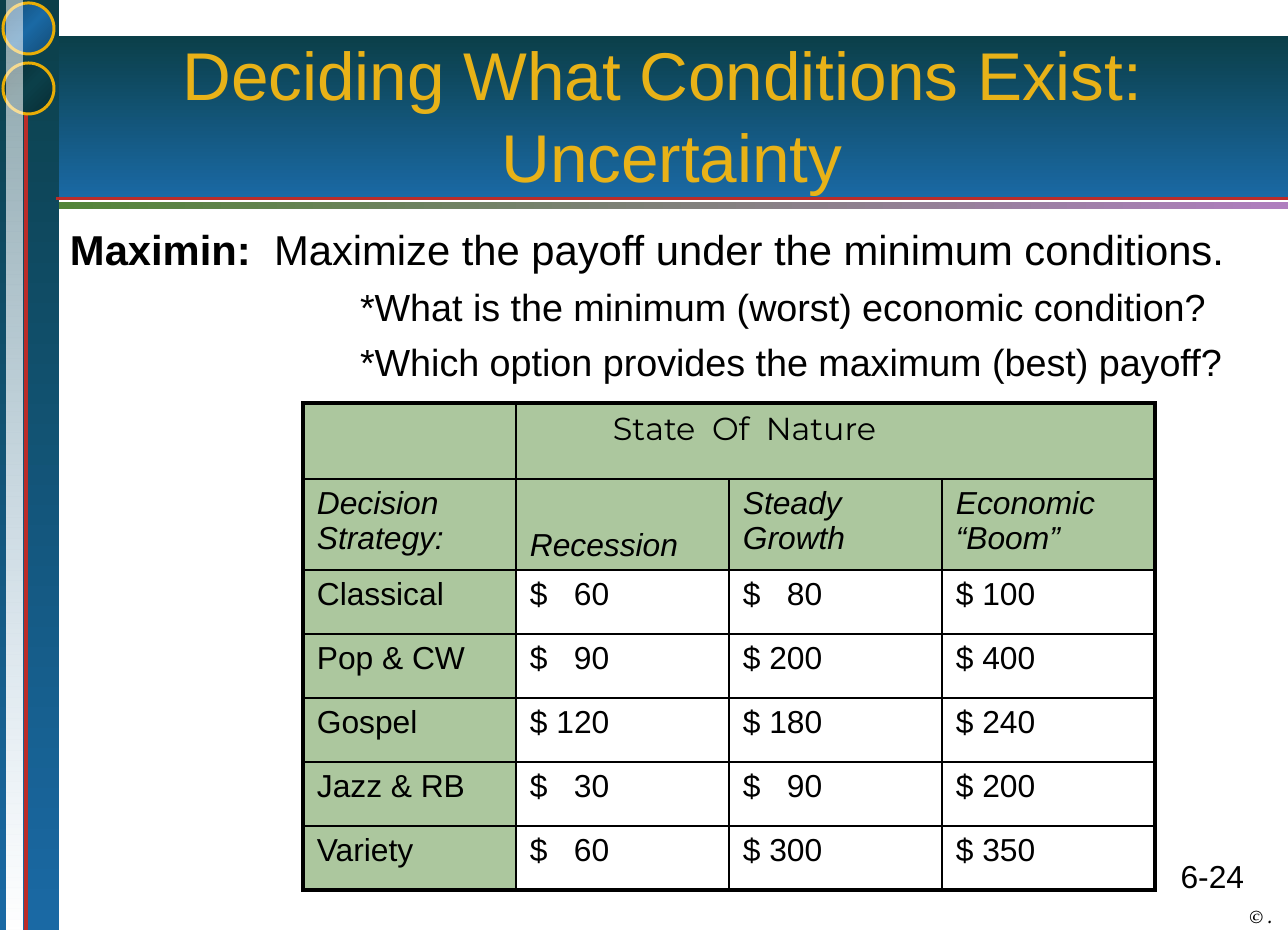
import pptx
import pptx.dml.color
import pptx.enum.shapes
import pptx.enum.text
import pptx.oxml
import pptx.oxml.ns
import pptx.util

SCALE = 6390
SHAPE = pptx.enum.shapes.MSO_SHAPE
ALIGN = pptx.enum.text.PP_ALIGN
ANCHOR = pptx.enum.text.MSO_ANCHOR
BLACK, GOLD, RED, SAGE, WHITE = "000000", "E8AD06", "BB2C29", "ACC79E", "FFFFFF"

BLUE = [(0, "0B3F49", 100), (100, "1A69A4", 100)]
RULE = [(0, "538438", 100), (100, "AF7EBE", 100)]
GLASS = [(0, WHITE, 52), (100, WHITE, 100)]
DARK_DISC = [(0, "082D34", 100), (50, "0B3F49", 100), (100, "082D34", 100)]
BLUE_DISC = [(0, "134B75", 100), (50, "1A69A4", 100), (100, "134B75", 100)]

BANDS = [
    ((0, 36, 1288, 162), BLUE, 90),
    ((56, 202, 1232, 7), RULE, 0),
    ((0, 0, 59, 930), BLUE, 90),
]
LINES = [((56, 199, 1288, 199), 1.5), ((26, 113, 26, 930), 2.25)]
DISCS = [((3, 63, 51, 51), DARK_DISC), ((3, 3, 51, 51), BLUE_DISC)]
STRIPE = (7, 0, 16, 930)

TITLE = "Deciding What Conditions Exist:  Uncertainty"
TERM = "Maximin:"
MEANING = "  Maximize the payoff under the minimum conditions."
QUESTIONS = [
    "*What is the minimum (worst) economic condition?",
    "*Which option provides the maximum (best) payoff?",
]
STATES = "State  Of  Nature"
HEADINGS = ["Decision Strategy:", "Recession", "Steady Growth", "Economic “Boom”"]
PAYOFFS = [
    ["Classical", "$   60", "$   80", "$ 100"],
    ["Pop & CW", "$   90", "$ 200", "$ 400"],
    ["Gospel", "$ 120", "$ 180", "$ 240"],
    ["Jazz & RB", "$   30", "$   90", "$ 200"],
    ["Variety", "$   60", "$ 300", "$ 350"],
]
ROWS = [["", STATES, "", ""], HEADINGS] + PAYOFFS
ROW_HEIGHTS = [76, 91] + [64] * len(PAYOFFS)
COLUMN_WIDTH = 213


def px(*lengths):
    return [pptx.util.Emu(length * SCALE) for length in lengths]


def color(value):
    return pptx.dml.color.RGBColor.from_string(value)


def element(xml):
    return pptx.oxml.parse_xml(xml.replace(">", " " + pptx.oxml.ns.nsdecls("a") + ">", 1))


def set_font(font, size, name="Arial", shade=BLACK, bold=False, italic=False):
    font.size, font.name = pptx.util.Pt(size), name
    font.bold, font.italic = bold, italic
    font.color.rgb = color(shade)


def add_gradient(page, kind, place, stops, angle):
    shape = page.shapes.add_shape(kind, *px(*place))
    shape.shadow.inherit = False
    shape.line.fill.background()
    marks = "".join(
        f'<a:gs pos="{position * 1000}"><a:srgbClr val="{shade}">'
        f'<a:alpha val="{alpha * 1000}"/></a:srgbClr></a:gs>'
        for position, shade, alpha in stops
    )
    gradient = element(
        f'<a:gradFill rotWithShape="1"><a:gsLst>{marks}</a:gsLst>'
        f'<a:lin ang="{angle * 60000}" scaled="0"/></a:gradFill>'
    )
    geometry = shape.element.spPr.find(pptx.oxml.ns.qn("a:prstGeom"))
    geometry.addnext(gradient)
    return shape


def add_line(page, ends, width):
    line = page.shapes.add_connector(pptx.enum.shapes.MSO_CONNECTOR.STRAIGHT, *px(*ends))
    line.line.color.rgb = color(RED)
    line.line.width = pptx.util.Pt(width)
    line.element.spPr.append(element("<a:effectLst></a:effectLst>"))


def add_box(page, place, margins, anchor=ANCHOR.TOP, wrap=True):
    box = page.shapes.add_textbox(*px(*place))
    frame = box.text_frame
    frame.word_wrap, frame.vertical_anchor = wrap, anchor
    frame.margin_left, frame.margin_top, frame.margin_right, frame.margin_bottom = px(*margins)
    return frame


def draw_frame(page):
    for place, stops, angle in BANDS:
        add_gradient(page, SHAPE.RECTANGLE, place, stops, angle)
    for ends, width in LINES:
        add_line(page, ends, width)
    for place, stops in DISCS:
        disc = add_gradient(page, SHAPE.OVAL, place, stops, 45)
        disc.line.color.rgb = color(GOLD)
        disc.line.width = pptx.util.Pt(1.5)
    add_gradient(page, SHAPE.RECTANGLE, STRIPE, GLASS, 90)


def write_title(page):
    para = add_box(page, (56, 37, 1232, 155), (13, 6, 13, 6), ANCHOR.MIDDLE).paragraphs[0]
    para.alignment = ALIGN.CENTER
    span = para.add_run()
    span.text = TITLE
    set_font(span.font, 34, shade="E8B218")
    shadow = element(
        '<a:effectLst><a:outerShdw dist="38100" dir="2700000">'
        f'<a:srgbClr val="{BLACK}"/></a:outerShdw></a:effectLst>'
    )
    span.font.fill._xPr.find(pptx.oxml.ns.qn("a:solidFill")).addnext(shadow)


def write_body(page):
    frame = add_box(page, (57, 218, 1231, 170), (13, 6, 13, 6))
    para = frame.paragraphs[0]
    for text, bold in ((TERM, True), (MEANING, False)):
        span = para.add_run()
        span.text = text
        set_font(span.font, 21, bold=bold)
    for question in QUESTIONS:
        para = frame.add_paragraph()
        para.text = question
        para.space_before = pptx.util.Pt(5)
        para._p.get_or_add_pPr().set("marL", str(290 * SCALE))
        set_font(para.font, 19)


def write_footer(page):
    number = add_box(page, (1145, 850, 113, 53), (14, 7, 14, 7)).paragraphs[0]
    number.text, number.alignment = "6-24", ALIGN.RIGHT
    set_font(number.font, 16)
    mark = add_box(page, (1249, 906, 23, 21), (0, 0, 0, 0), ANCHOR.BOTTOM, False).paragraphs[0]
    mark.text, mark.alignment = "© .", ALIGN.RIGHT
    set_font(mark.font, 9, "TeX Gyre Pagella", bold=True, italic=True)


def set_borders(cell, outer):
    borders = [
        element(
            f'<a:ln{side} w="{28575 if side in outer else 12700}">'
            f'<a:solidFill><a:srgbClr val="{BLACK}"/></a:solidFill></a:ln{side}>'
        )
        for side in "LRTB"
    ]
    properties = cell._tc.get_or_add_tcPr()
    for position, border in enumerate(borders):
        properties.insert(position, border)


def draw_table(page):
    last_row, last_column = len(ROWS) - 1, len(HEADINGS) - 1
    size = (COLUMN_WIDTH * len(HEADINGS), sum(ROW_HEIGHTS))
    table = page.shapes.add_table(len(ROWS), len(HEADINGS), *px(303, 403, *size)).table
    table.first_row = table.horz_banding = False
    for column in table.columns:
        column.width = px(COLUMN_WIDTH)[0]
    for row, height in zip(table.rows, ROW_HEIGHTS):
        row.height = px(height)[0]
    table.cell(0, 1).merge(table.cell(0, last_column))
    for i, texts in enumerate(ROWS):
        for j, text in enumerate(texts):
            cell = table.cell(i, j)
            cell.fill.solid()
            cell.fill.fore_color.rgb = color(SAGE if i < 2 or j == 0 else WHITE)
            cell.margin_left, cell.margin_top, cell.margin_right, cell.margin_bottom = px(14, 7, 14, 7)
            para = cell.text_frame.paragraphs[0]
            para.text = text
            set_font(para.font, 16, "Montserrat" if i == 0 else "Arial", italic=i == 1)
            edges = {"L": j == 0, "R": j == last_column or text == STATES, "T": i == 0, "B": i == last_row}
            set_borders(cell, [side for side, outer in edges.items() if outer])
    table.cell(0, 1).margin_left = px(97)[0]
    table.cell(1, 1).vertical_anchor = ANCHOR.BOTTOM


def main():
    """Build the slide on the maximin rule and its payoff table."""
    deck = pptx.Presentation()
    deck.slide_width, deck.slide_height = pptx.util.Inches(9), pptx.util.Inches(6.5)
    page = deck.slides.add_slide(deck.slide_layouts[6])
    draw_frame(page)
    write_title(page)
    write_body(page)
    draw_table(page)
    write_footer(page)
    deck.save("out.pptx")


if __name__ == "__main__":
    main()
